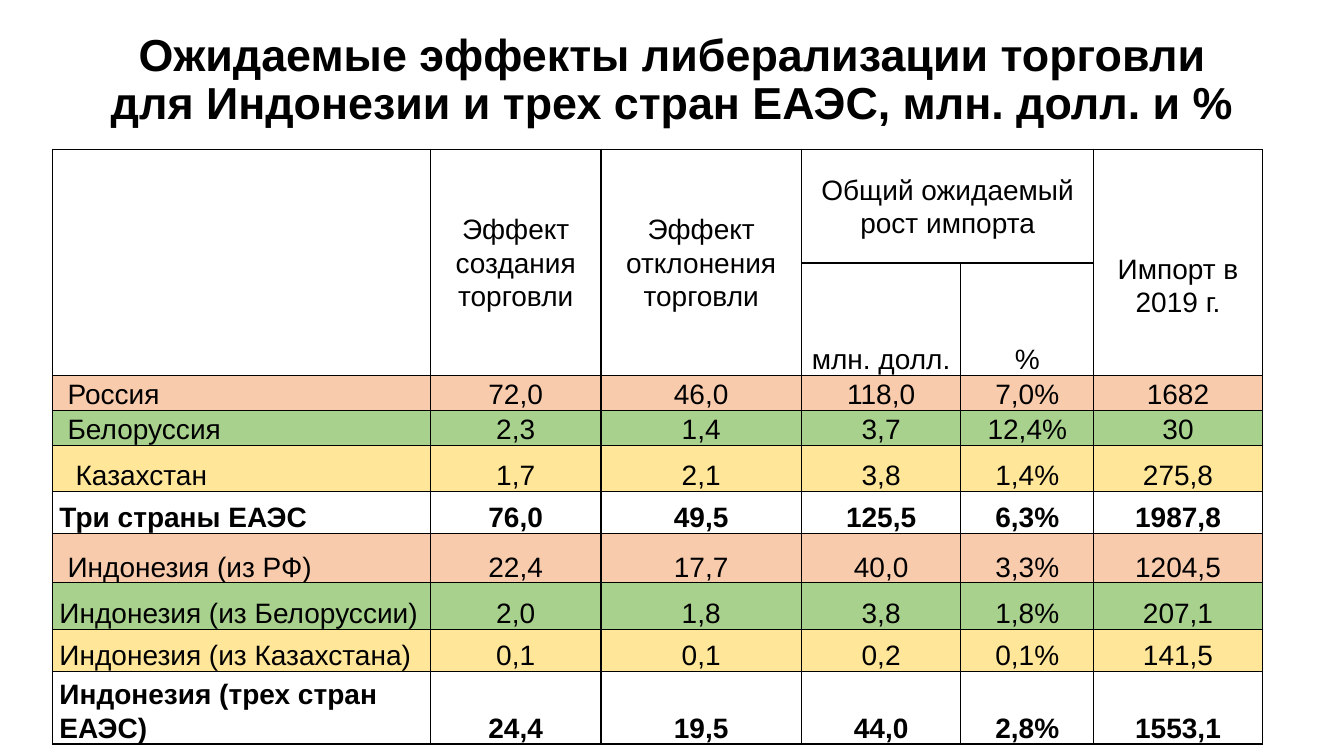
"""Build the slide on expected trade liberalisation effects for Indonesia and three EAEU countries."""
from dataclasses import dataclass

from lxml import etree
from pptx import Presentation
from pptx.dml.color import RGBColor
from pptx.enum.text import MSO_ANCHOR, MSO_AUTO_SIZE, PP_ALIGN
from pptx.oxml.ns import qn
from pptx.util import Inches, Pt

LEFT, CENTER = PP_ALIGN.LEFT, PP_ALIGN.CENTER
MIDDLE, BOTTOM = MSO_ANCHOR.MIDDLE, MSO_ANCHOR.BOTTOM
NO_AUTOFIT = MSO_AUTO_SIZE.NONE

TITLE = "Ожидаемые эффекты либерализации торговли для Индонезии и трех стран ЕАЭС, млн. долл. и %"
TITLE_BOX = (0.92, 0.15, 11.5, 1.31)
TABLE_ORIGIN = (0.52, 1.48)
COLUMN_WIDTHS = (3.75, 1.69, 1.99, 1.58, 1.32, 1.67)
HEADER_HEIGHTS = (1.13, 1.11)

HEADERS = [
    (0, 1, "Эффект создания торговли", MIDDLE, 0),
    (0, 2, "Эффект отклонения торговли", MIDDLE, 0),
    (0, 3, "Общий ожидаемый рост импорта", MIDDLE, 0),
    (0, 5, "Импорт в 2019 г.", MIDDLE, 0.45),
    (1, 3, "млн. долл.", BOTTOM, 0),
    (1, 4, "%", BOTTOM, 0),
]
MERGES = [((0, 0), (1, 0)), ((0, 1), (1, 1)), ((0, 2), (1, 2)), ((0, 3), (0, 4)), ((0, 5), (1, 5))]

ROWS = [
    (0.35, "russia", 1, ("Россия", "72,0", "46,0", "118,0", "7,0%", "1682")),
    (0.35, "belarus", 1, ("Белоруссия", "2,3", "1,4", "3,7", "12,4%", "30")),
    (0.45, "kazakhstan", 2, ("Казахстан", "1,7", "2,1", "3,8", "1,4%", "275,8")),
    (0.42, "total", 0, ("Три страны ЕАЭС", "76,0", "49,5", "125,5", "6,3%", "1987,8")),
    (0.49, "russia", 1, ("Индонезия (из РФ)", "22,4", "17,7", "40,0", "3,3%", "1204,5")),
    (0.46, "belarus", 0, ("Индонезия (из Белоруссии)", "2,0", "1,8", "3,8", "1,8%", "207,1")),
    (0.42, "kazakhstan", 0, ("Индонезия (из Казахстана)", "0,1", "0,1", "0,2", "0,1%", "141,5")),
    (0.72, "total", 0, ("Индонезия (трех стран ЕАЭС)", "24,4", "19,5", "44,0", "2,8%", "1553,1")),
]


@dataclass(frozen=True)
class Theme:
    """Colours, type sizes and spacing of the slide."""
    font: str = "Arial"
    ink: str = "000000"
    russia: str = "F8CBAD"
    belarus: str = "A9D18E"
    kazakhstan: str = "FFE699"
    title_size: int = 32
    body_size: int = 20
    border: int = 1
    cell_margin: float = 0.07
    indent: float = 0.08


THEME = Theme()


def format_paragraph(paragraph, size, bold, alignment, line_spacing):
    """Apply the font and alignment to one paragraph."""
    font = paragraph.font
    font.name, font.size, font.bold = THEME.font, Pt(size), bold
    font.color.rgb = RGBColor.from_string(THEME.ink)
    paragraph.alignment, paragraph.line_spacing = alignment, line_spacing


def add_title(slide):
    """Place and format the title."""
    title = slide.shapes.title
    title.left, title.top, title.width, title.height = map(Inches, TITLE_BOX)
    frame = title.text_frame
    frame.text = TITLE
    frame.word_wrap, frame.auto_size = True, NO_AUTOFIT
    frame.vertical_anchor = MIDDLE
    format_paragraph(frame.paragraphs[0], THEME.title_size, True, CENTER, 0.9)


def draw_borders(cell):
    """Outline a cell on all four sides and leave it unfilled."""
    properties = cell._tc.get_or_add_tcPr()
    for side in ("a:lnL", "a:lnR", "a:lnT", "a:lnB"):
        line = etree.SubElement(properties, qn(side), w=str(Pt(THEME.border)))
        fill = etree.SubElement(line, qn("a:solidFill"))
        etree.SubElement(fill, qn("a:srgbClr"), val=THEME.ink)
    cell.fill.background()


def write_cell(cell, text, alignment=CENTER, anchor=BOTTOM, bold=False, indent=0, top=0):
    """Write one line of content into a table cell."""
    cell.text = text
    cell.vertical_anchor = anchor
    cell.margin_left = Inches(THEME.cell_margin + indent * THEME.indent)
    cell.margin_right = Inches(THEME.cell_margin)
    cell.margin_top, cell.margin_bottom = Inches(top), 0
    paragraph = cell.text_frame.paragraphs[0]
    format_paragraph(paragraph, THEME.body_size, bold, alignment, 1.07)
    paragraph.space_after = Pt(8)


def add_effects_table(slide):
    """Add the table of trade effects."""
    heights = HEADER_HEIGHTS + tuple(row[0] for row in ROWS)
    box = map(Inches, (*TABLE_ORIGIN, sum(COLUMN_WIDTHS), sum(heights)))
    table = slide.shapes.add_table(len(heights), len(COLUMN_WIDTHS), *box).table
    table.first_row = table.horz_banding = False
    for column, width in zip(table.columns, COLUMN_WIDTHS):
        column.width = Inches(width)
    for row, height in zip(table.rows, heights):
        row.height = Inches(height)
    for cell in table.iter_cells():
        draw_borders(cell)
    for start, end in MERGES:
        table.cell(*start).merge(table.cell(*end))
    for row, column, text, anchor, top in HEADERS:
        write_cell(table.cell(row, column), text, anchor=anchor, top=top)
    for row, (_, group, indent, values) in enumerate(ROWS, len(HEADER_HEIGHTS)):
        total = group == "total"
        for column, text in enumerate(values):
            cell = table.cell(row, column)
            is_label = column == 0
            write_cell(cell, text, LEFT if is_label else CENTER, bold=total, indent=indent if is_label else 0)
            if not total:
                cell.fill.solid()
                cell.fill.fore_color.rgb = RGBColor.from_string(getattr(THEME, group))


def main():
    """Create and save the presentation."""
    presentation = Presentation()
    presentation.slide_width, presentation.slide_height = Inches(13.33), Inches(7.5)
    slide = presentation.slides.add_slide(presentation.slide_layouts.get_by_name("Title Only"))
    add_title(slide)
    add_effects_table(slide)
    presentation.save("out.pptx")


if __name__ == "__main__":
    main()
